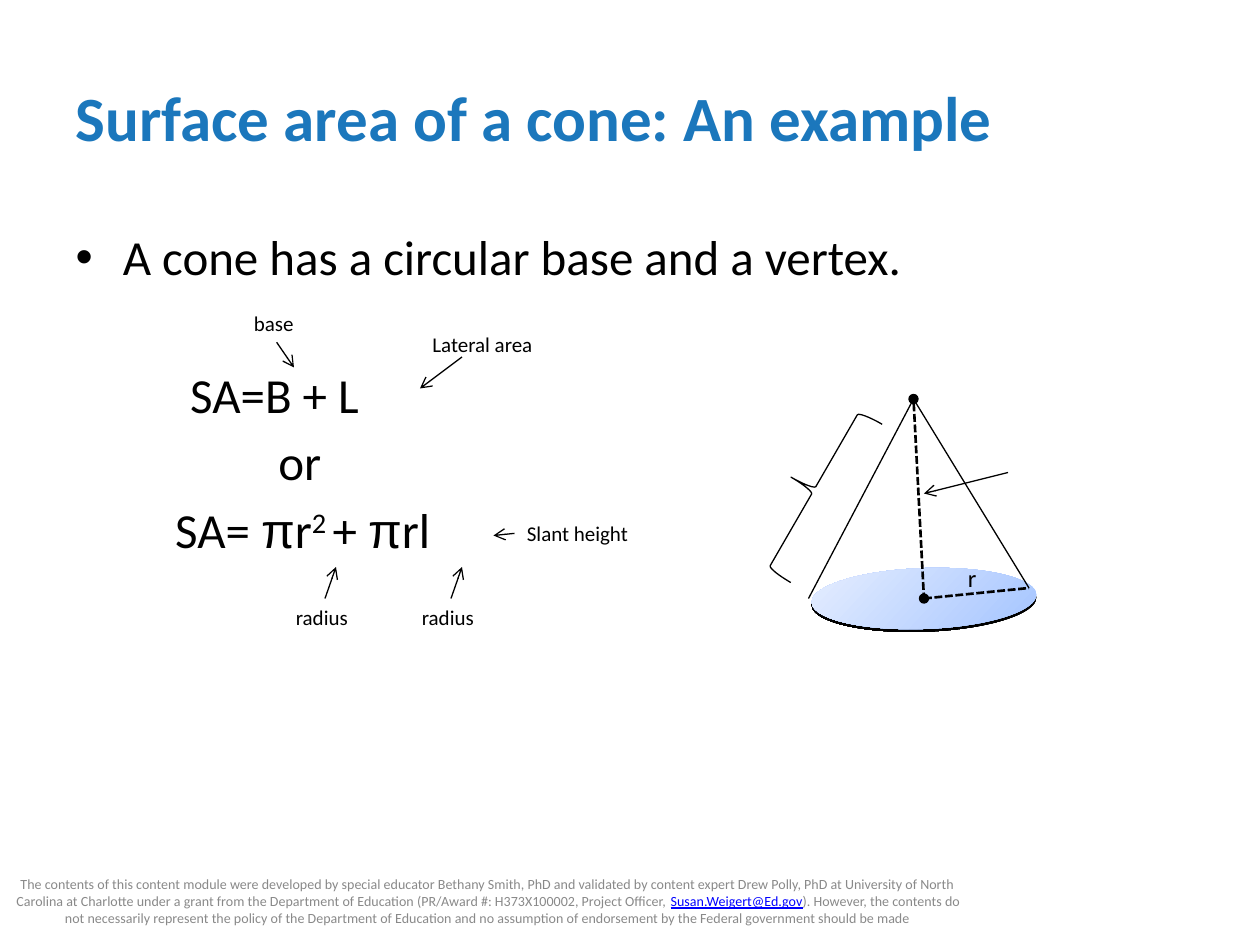
"""Build a slide on the surface area of a cone, with a labelled formula and a cone drawing."""
from lxml.etree import SubElement
from pptx import Presentation
from pptx.dml.color import RGBColor
from pptx.enum.dml import MSO_LINE_DASH_STYLE as DASH
from pptx.enum.shapes import MSO_CONNECTOR as CONNECTOR, MSO_SHAPE as SHAPE
from pptx.enum.text import MSO_ANCHOR as ANCHOR, PP_ALIGN as ALIGN
from pptx.oxml.ns import qn
from pptx.util import Inches, Pt

COLORS = {"title": "1B77BC", "text": "000000", "footer": "898989", "link": "0000FF",
          "base_dark": "A4C4FF", "base_light": "E6EEFF"}

presentation = Presentation()
presentation.slide_width, presentation.slide_height = Inches(10), Inches(7.5)
COLUMN, ROW = presentation.slide_width / 120, presentation.slide_height / 90
slide = presentation.slides.add_slide(presentation.slide_layouts[1])


def add_run(paragraph, text, size, color="text", font="Calibri"):
    run = paragraph.add_run()
    run.text = text
    run.font.name, run.font.size = font, Pt(size)
    run.font.color.rgb = RGBColor.from_string(COLORS[color])
    return run


def add_line(shapes, start, end, width=0.75, dash=None, head=None, tail=None):
    line = shapes.add_connector(CONNECTOR.STRAIGHT, int(start[0] * COLUMN), int(start[1] * ROW),
                                int(end[0] * COLUMN), int(end[1] * ROW))
    line.line.color.rgb = RGBColor.from_string(COLORS["text"])
    line.line.width = Pt(width)
    line.line.dash_style = dash
    outline = line.line._get_or_add_ln()
    for tag, kind in (("a:headEnd", head), ("a:tailEnd", tail)):
        if kind:
            SubElement(outline, qn(tag), type=kind)
    SubElement(line._element.spPr, qn("a:effectLst"))
    return line


cone = slide.shapes.add_group_shape().shapes
base = cone.add_shape(SHAPE.OVAL, int(77.3 * COLUMN), int(54.1 * ROW),
                      int(21.4 * COLUMN), int(5.8 * ROW))
base.rotation = -2
base.fill.gradient()
base.fill.gradient_angle = 135
for stop, color in zip(base.fill.gradient_stops, ("base_dark", "base_light")):
    stop.color.rgb = RGBColor.from_string(COLORS[color])
base.line.fill.background()
base.shadow.inherit = False
shadow = SubElement(base._element.spPr.find(qn("a:effectLst")), qn("a:outerShdw"),
                    dist=str(Pt(1.6)), dir="5400000", rotWithShape="0")
SubElement(shadow, qn("a:srgbClr"), val=COLORS["text"])

apex, center, left, right = (87, 38), (88, 57), (77, 57), (98, 56)
add_line(cone, apex, left)
add_line(cone, right, apex)
add_line(cone, center, right, 1.5, DASH.SQUARE_DOT)
add_line(cone, apex, center, 1.5, DASH.SQUARE_DOT, "oval", "oval")
add_line(cone, (96, 45), (88, 47), tail="arrow")

brace = cone.add_shape(SHAPE.LEFT_BRACE, int(75 * COLUMN), int(38 * ROW),
                       int(5 * COLUMN), int(17.4 * ROW))
brace.rotation = 30
brace.adjustments[0], brace.adjustments[1] = 0.08, 0.5
brace.fill.background()
brace.line.color.rgb = RGBColor.from_string(COLORS["text"])
brace.line.width = Pt(0.75)
brace.shadow.inherit = False

radius = cone.add_textbox(int(91 * COLUMN), int(53 * ROW), int(3.4 * COLUMN), int(4 * ROW))
radius.text_frame.word_wrap = False
add_run(radius.text_frame.paragraphs[0], "r", 14)

title, body = slide.shapes.title, slide.placeholders[1]
for placeholder, top, height in ((title, 3.6, 15), (body, 21, 59.4)):
    placeholder.left, placeholder.top = int(6 * COLUMN), int(top * ROW)
    placeholder.width, placeholder.height = int(108 * COLUMN), int(height * ROW)
title.text_frame.vertical_anchor = ANCHOR.MIDDLE
heading = title.text_frame.paragraphs[0]
heading.alignment = ALIGN.LEFT
add_run(heading, "Surface area of a cone: An example", 36, "title").font.bold = True

statement = body.text_frame.paragraphs[0]
statement.space_before = Pt(0)
add_run(statement, "A cone has a circular base and a vertex.", 28)

formulas = [
    (0.91, 45, ["SA=B + L"]),
    (1.61, 5, ["or"]),
    (0.79, 5, ["SA= ", "π", "r", "2 ", "+ ", "π", "rl"]),
]
for indent, space, parts in formulas:
    paragraph = body.text_frame.add_paragraph()
    properties = paragraph._p.get_or_add_pPr()
    properties.set("marL", str(Inches(indent)))
    properties.set("indent", "0")
    paragraph.space_before = Pt(space)
    SubElement(properties, qn("a:buNone"))
    for part in parts:
        run = add_run(paragraph, part, 28, font="Arial" if part == "π" else "Calibri")
        if part == "2 ":
            run.font._element.set("baseline", "30000")

footer = slide.shapes.add_textbox(0, int(83.4 * ROW), int(93 * COLUMN), int(4.8 * ROW))
footer.text_frame.word_wrap = True
footer.text_frame.vertical_anchor = ANCHOR.MIDDLE
notice = footer.text_frame.paragraphs[0]
notice.alignment = ALIGN.CENTER
add_run(notice, "The contents of this content module were developed by special educator Bethany Smith, "
        "PhD and validated by content expert Drew Polly, PhD at University of North Carolina at "
        "Charlotte under a grant from the Department of Education (PR/Award #: H373X100002, "
        "Project Officer, ", 8, "footer")
add_run(notice, "Susan.Weigert@Ed.gov", 8, "link").font.underline = True
add_run(notice, "). However, the contents do not necessarily represent the policy of the Department "
        "of Education and no assumption of endorsement by the Federal government should be made",
        8, "footer")

labels = [
    ("base", 23, 29, 6.7, (26.4, 32.6), (28, 35), 2),
    ("Lateral area", 40, 31, 13.2, (44, 34), (40, 37), None),
    ("radius", 39, 57, 7.9, (43, 57), (44, 54), 0),
    ("Slant height", 49, 49, 13, (49, 50.8), (47, 51), 1),
    ("radius", 27, 57, 7.9, (31, 57), (32, 54), 0),
]
for text, column, row, width, start, end, side in labels:
    label = slide.shapes.add_textbox(int(column * COLUMN), int(row * ROW),
                                     int(width * COLUMN), int(3.6 * ROW))
    label.text_frame.word_wrap = False
    add_run(label.text_frame.paragraphs[0], text, 12)
    arrow = add_line(slide.shapes, start, end, tail="arrow")
    if side is not None:
        arrow.begin_connect(label, side)

presentation.save("out.pptx")
